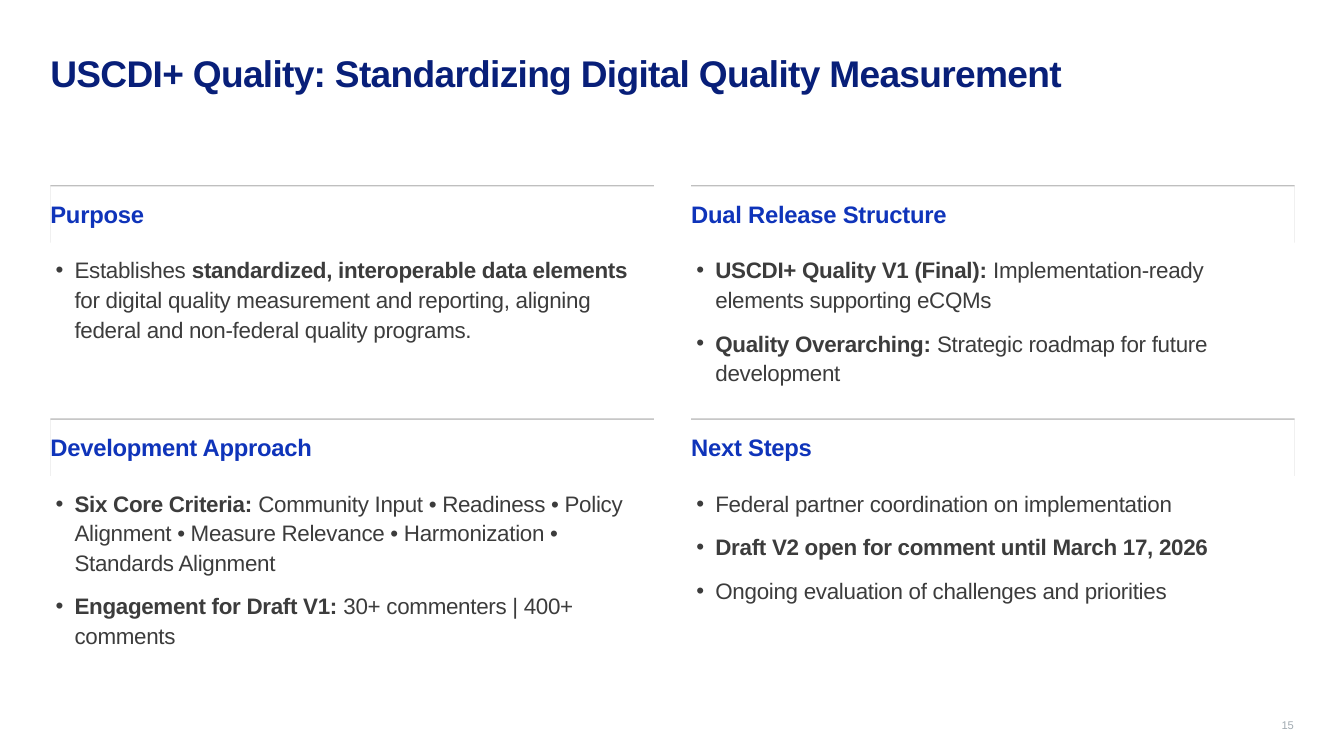
from dataclasses import dataclass

import lxml.etree
import pptx
import pptx.dml.color
import pptx.enum.shapes
import pptx.enum.text
import pptx.oxml.ns
import pptx.util

Cm = pptx.util.Cm
Pt = pptx.util.Pt
ALIGN = pptx.enum.text.PP_ALIGN
ANCHOR = pptx.enum.text.MSO_ANCHOR


@dataclass(frozen=True)
class Style:
    size: float
    color: str
    bold: bool = False
    tracking: int = 0
    line_spacing: float = 1.0


@dataclass(frozen=True)
class Theme:
    font: str = "Arial"
    panel: str = "FFFFFF"
    rule: str = "BFBFBF"
    title: Style = Style(26.5, "081F79", True, -50)
    heading: Style = Style(17, "0F34BA", True, -20, 1.1)
    body: Style = Style(16, "3C3C3C", False, -20, 1.1)
    page: Style = Style(8, "A1AAB1", False, 0, 0.9)


THEME = Theme()
LEFT, TOP = 1.27, 4.7
COLUMN_STEP, ROW_STEP = 16.15, 5.88
SECTION_WIDTH, HEADING_HEIGHT = 15.21, 1.45
BODY_OFFSET, BODY_HEIGHT = 1.57, 3.56

SECTIONS = [
    ("Purpose", [
        [("Establishes ", False),
         ("standardized, interoperable data elements", True),
         (" for digital quality measurement and reporting, aligning federal "
          "and non-federal quality programs.", False)],
    ]),
    ("Dual Release Structure", [
        [("USCDI+ Quality V1 (Final): ", True),
         ("Implementation-ready elements supporting eCQMs", False)],
        [("Quality Overarching: ", True),
         ("Strategic roadmap for future development", False)],
    ]),
    ("Development Approach", [
        [("Six Core Criteria:", True),
         (" Community Input • Readiness • Policy Alignment • Measure Relevance "
          "• Harmonization • Standards Alignment", False)],
        [("Engagement for Draft V1:", True),
         (" 30+ commenters | 400+ comments", False)],
    ]),
    ("Next Steps", [
        [("Federal partner coordination on implementation", False)],
        [("Draft V2 open for comment until March 17, 2026", True)],
        [("Ongoing evaluation of challenges and priorities", False)],
    ]),
]


def rgb(value):
    return pptx.dml.color.RGBColor.from_string(value)


def add_xml(parent, tag, **attributes):
    return lxml.etree.SubElement(parent, pptx.oxml.ns.qn(tag), **attributes)


def set_frame(frame, margins, anchor=ANCHOR.TOP):
    frame.word_wrap = True
    frame.vertical_anchor = anchor
    (frame.margin_left, frame.margin_top,
     frame.margin_right, frame.margin_bottom) = map(Cm, margins)


def add_text_box(slide, box, margins, anchor=ANCHOR.TOP):
    frame = slide.shapes.add_textbox(*map(Cm, box)).text_frame
    set_frame(frame, margins, anchor)
    return frame


def write(paragraph, pieces, style, align=ALIGN.LEFT):
    paragraph.alignment = align
    paragraph.line_spacing = style.line_spacing
    font = paragraph.font
    font.name = THEME.font
    font.size = Pt(style.size)
    font.color.rgb = rgb(style.color)
    weights = {bold for _, bold in pieces}
    if len(weights) == 1:
        font.bold = pieces[0][1]
    for text, bold in pieces:
        run = paragraph.add_run()
        run.text = text
        if len(weights) > 1:
            run.font.bold = bold
        if style.tracking:
            run._r.get_or_add_rPr().set("spc", str(style.tracking))


def write_line(frame, text, style, align=ALIGN.LEFT):
    write(frame.paragraphs[0], [(text, style.bold)], style, align)


def add_top_rule_shadow(shape):
    effects = add_xml(shape._element.spPr, "a:effectLst")
    shadow = add_xml(effects, "a:outerShdw", blurRad="0", dist=str(Pt(1)),
                     dir="16200000", algn="b", rotWithShape="0")
    add_xml(shadow, "a:srgbClr", val=THEME.rule)


def add_heading(slide, left, top, text):
    panel = slide.shapes.add_shape(
        pptx.enum.shapes.MSO_SHAPE.RECTANGLE,
        Cm(left), Cm(top), Cm(SECTION_WIDTH), Cm(HEADING_HEIGHT))
    panel.fill.solid()
    panel.fill.fore_color.rgb = rgb(THEME.panel)
    panel.line.fill.background()
    add_top_rule_shadow(panel)
    set_frame(panel.text_frame, (0, 0.25, 0, 0.13))
    write_line(panel.text_frame, text, THEME.heading)


def add_bullets(slide, left, top, bullets):
    frame = add_text_box(slide, (left, top, SECTION_WIDTH, BODY_HEIGHT), [0.13] * 4)
    for index, pieces in enumerate(bullets):
        paragraph = frame.add_paragraph() if index else frame.paragraphs[0]
        properties = paragraph._p.get_or_add_pPr()
        properties.set("marL", str(Cm(0.48)))
        properties.set("indent", str(-Cm(0.48)))
        add_xml(properties, "a:buFont", typeface=THEME.font)
        add_xml(properties, "a:buChar", char="•")
        if index:
            paragraph.space_before = Pt(10)
        write(paragraph, pieces, THEME.body)


def main():
    deck = pptx.Presentation()
    deck.slide_width, deck.slide_height = Cm(33.87), Cm(19.05)
    slide = deck.slides.add_slide(deck.slide_layouts[6])

    title = add_text_box(slide, (LEFT, 1.27, 31.34, 2.46), (0, 0, 0, 0.13))
    write_line(title, "USCDI+ Quality: Standardizing Digital Quality Measurement",
               THEME.title)

    for index, (heading, bullets) in enumerate(SECTIONS):
        row, column = divmod(index, 2)
        left = LEFT + column * COLUMN_STEP
        top = TOP + row * ROW_STEP
        add_bullets(slide, left, top + BODY_OFFSET, bullets)
        add_heading(slide, left, top, heading)

    page = add_text_box(slide, (31.85, 17.5, 0.76, 0.94), [0] * 4, ANCHOR.BOTTOM)
    write_line(page, "15", THEME.page, ALIGN.RIGHT)

    deck.save("out.pptx")


if __name__ == "__main__":
    main()
